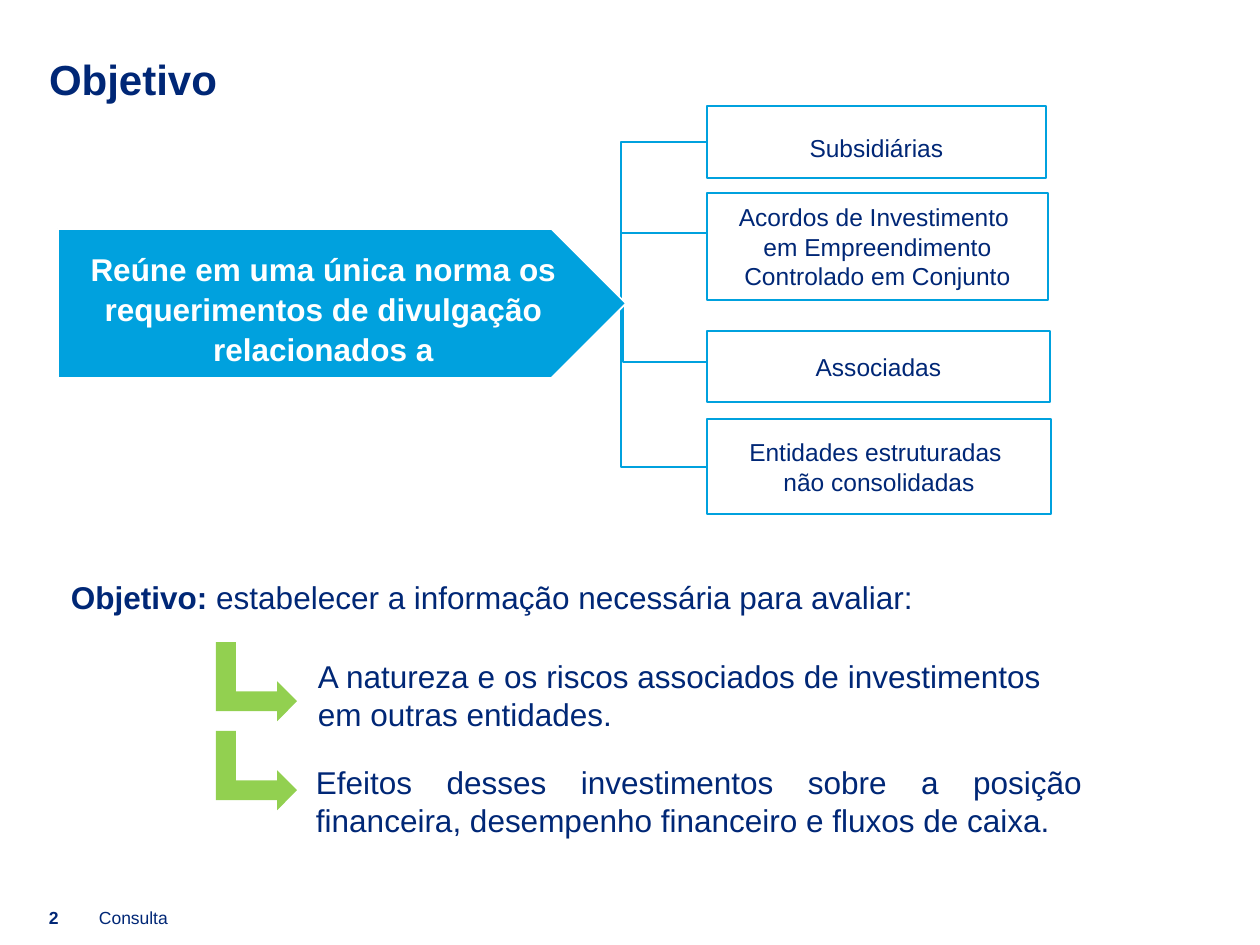
from lxml.etree import SubElement
from pptx import Presentation
from pptx.dml.color import RGBColor
from pptx.enum.shapes import MSO_CONNECTOR, MSO_SHAPE
from pptx.enum.text import MSO_ANCHOR, PP_ALIGN
from pptx.oxml.ns import qn
from pptx.util import Emu, Pt

NAVY = RGBColor(0x00, 0x27, 0x76)
CYAN = RGBColor(0x00, 0xA1, 0xDE)
GREEN = RGBColor(0x92, 0xD0, 0x50)
WHITE = RGBColor(0xFF, 0xFF, 0xFF)
FONT = "Arial"
PX_PER_INCH = 126

ENTITIES = [
    (["Subsidiárias"], (0, 0, 339, 72), 17, (-172, 0, 36)),
    (["Acordos de Investimento ", "em Empreendimento Controlado em Conjunto"],
     (0, 87, 341, 107), 5, (-184, 12, 127)),
    (["Associadas"], (0, 225, 343, 71), 5, (-247, 79, 256)),
    (["Entidades estruturadas ", "não consolidadas"],
     (0, 313, 344, 95), 5, (-172, 0, 361)),
]
GOALS = [
    ("A natureza e os riscos associados de investimentos em outras entidades.",
     (190, 79, 805, 89)),
    ("Efeitos desses investimentos sobre a posição financeira, "
     "desempenho financeiro e fluxos de caixa.", (188, 185, 848, 89)),
]


def px(length):
    return Emu(round(length * 914400 / PX_PER_INCH))


def within(region, part):
    left, top = region[:2]
    return left + part[0], top + part[1], part[2], part[3]


def write(holder, paragraphs, size=14, color=NAVY, bold=False, align=PP_ALIGN.LEFT,
          anchor=MSO_ANCHOR.TOP, insets=(0, 0, 0, 0), spacing=None):
    frame = holder.text_frame
    frame.word_wrap = True
    frame.vertical_anchor = anchor
    frame.margin_left, frame.margin_top, frame.margin_right, frame.margin_bottom = map(px, insets)
    for index, runs in enumerate(paragraphs):
        paragraph = frame.paragraphs[0] if index == 0 else frame.add_paragraph()
        paragraph.alignment = align
        if spacing:
            paragraph.line_spacing = spacing
        for words, weight in [(runs, bold)] if isinstance(runs, str) else runs:
            run = paragraph.add_run()
            run.text = words
            run.font.name = FONT
            run.font.size = Pt(size)
            run.font.bold = weight
            run.font.color.rgb = color


def add_text(slide, box, paragraphs, **text_format):
    holder = slide.shapes.add_textbox(*map(px, box))
    write(holder, paragraphs, **text_format)


def add_block(slide, preset, box, fill, outline=None):
    block = slide.shapes.add_shape(preset, *map(px, box))
    block.shadow.inherit = False
    block.fill.solid()
    block.fill.fore_color.rgb = fill
    if outline is None:
        block.line.fill.background()
    else:
        block.line.color.rgb = outline
        block.line.width = Pt(1)
    return block


def add_branch(slide, start, end):
    branch = slide.shapes.add_connector(MSO_CONNECTOR.ELBOW, *map(px, start + end))
    branch.line.color.rgb = CYAN
    branch.line.width = Pt(0.75)
    SubElement(branch._element.spPr, qn("a:effectLst"))


def add_heading(slide, box):
    title = slide.shapes.title
    title.left, title.top, title.width, title.height = map(px, box)
    write(title, ["Objetivo"], size=24, bold=True, anchor=MSO_ANCHOR.MIDDLE)


def add_entities(slide, region, origin_y):
    for words, part, top_inset, (start_x, end_x, end_y) in ENTITIES:
        left, top = region[:2]
        add_branch(slide, (left + start_x, origin_y), (left + end_x, top + end_y))
        entity = add_block(slide, MSO_SHAPE.RECTANGLE, within(region, part), WHITE, CYAN)
        write(entity, words, align=PP_ALIGN.CENTER, anchor=MSO_ANCHOR.MIDDLE,
              insets=(5, top_inset, 5, 5))


def add_norm(slide, box):
    norm = add_block(slide, MSO_SHAPE.PENTAGON, box, CYAN, WHITE)
    write(norm, ["Reúne em uma única norma os requerimentos de divulgação relacionados a"],
          size=18, color=WHITE, bold=True, align=PP_ALIGN.CENTER,
          anchor=MSO_ANCHOR.MIDDLE, insets=(5, 13, 5, 5), spacing=1.06)


def add_goals(slide, region):
    add_text(slide, within(region, (0, 0, 915, 50)),
             [[("Objetivo: ", True), ("estabelecer a informação necessária para avaliar:", False)]],
             size=18, align=PP_ALIGN.JUSTIFY, insets=(13, 6, 13, 6))
    for index, (words, part) in enumerate(GOALS):
        add_text(slide, within(region, part), [words], size=18,
                 align=PP_ALIGN.JUSTIFY, insets=(70, 6, 12, 6))
        arrow = add_block(slide, MSO_SHAPE.BENT_UP_ARROW,
                          within(region, (159, 69 + 89 * index, 79, 81)), GREEN)
        arrow.rotation = 90


def add_footer(slide, region):
    add_text(slide, within(region, (0, 0, 49, 18)), ["2"], size=10, bold=True,
             anchor=MSO_ANCHOR.BOTTOM)
    add_text(slide, within(region, (50, 0, 507, 18)), ["Consulta"], size=10,
             anchor=MSO_ANCHOR.BOTTOM)


def main():
    deck = Presentation()
    deck.slide_width, deck.slide_height = px(1260), px(945)
    slide = deck.slides.add_slide(deck.slide_layouts[5])
    add_heading(slide, (49, 54, 1160, 50))
    add_entities(slide, (707, 106, 344, 408), 304)
    add_norm(slide, (58, 229, 568, 149))
    add_goals(slide, (58, 572, 1036, 275))
    add_footer(slide, (49, 910, 557, 18))
    deck.save("out.pptx")


if __name__ == "__main__":
    main()
